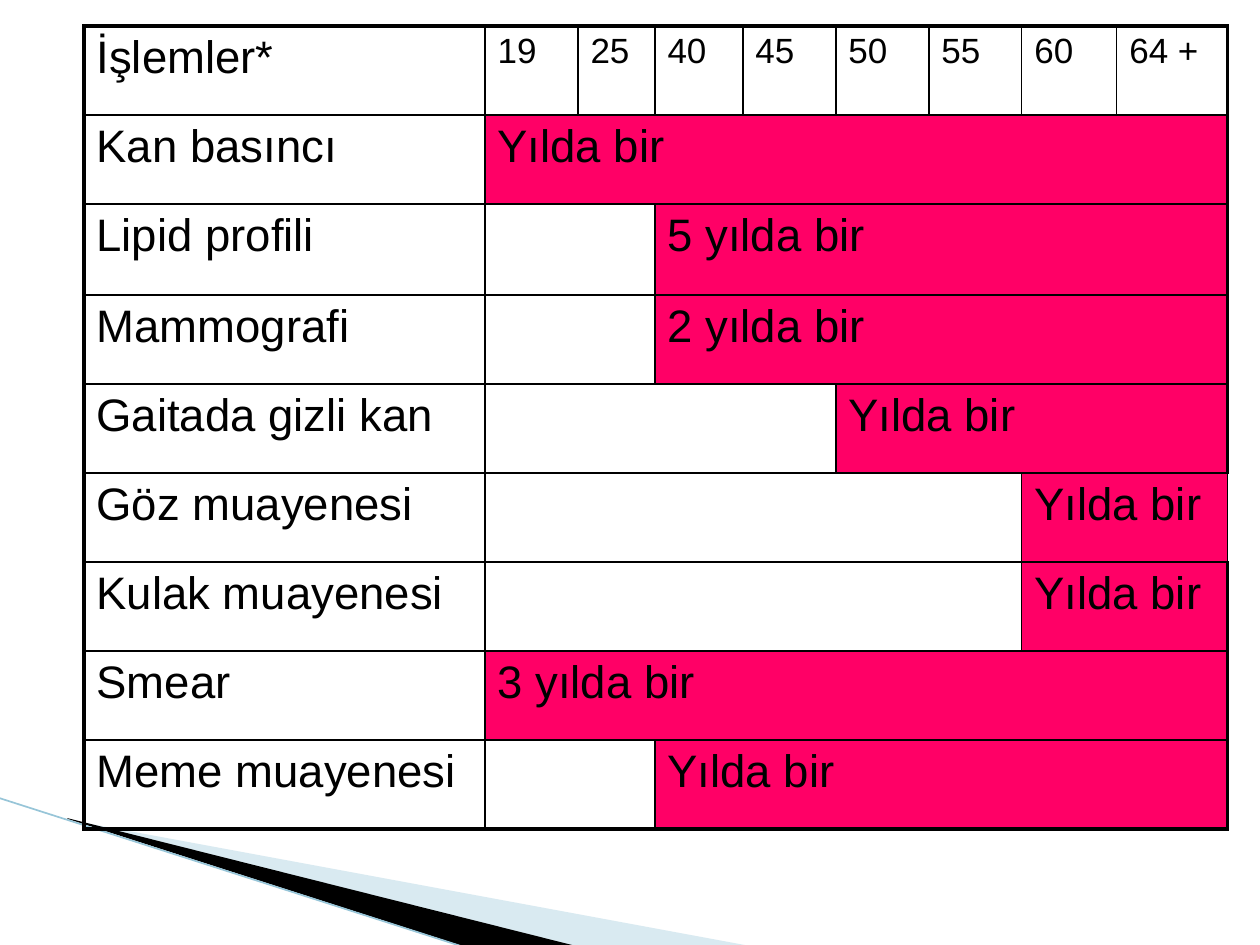
from dataclasses import dataclass
from lxml.etree import SubElement
from pptx import Presentation
from pptx.dml.color import RGBColor as Rgb
from pptx.enum.shapes import MSO_CONNECTOR as Link
from pptx.oxml.ns import qn
from pptx.util import Emu, Pt


@dataclass(frozen=True)
class Theme:
    font: str = "Arial"
    ink: str = "000000"
    pink: str = "FF0066"
    pale: str = "A0CBDC"
    edge: str = "97C5D8"
    big: int = 26
    small: int = 20
    thin: float = 1
    thick: float = 2.25


T = Theme()
COLS = [401, 93, 77, 88, 93, 93, 93, 95, 111]
ROWS = [89, 89, 91, 89, 89, 89, 89, 89, 89]
AGES = ["19", "25", "40", "45", "50", "55", "60", "64 +"]
TESTS = [
    ("Kan basıncı", 1, "Yılda bir"),
    ("Lipid profili", 3, "5 yılda bir"),
    ("Mammografi", 3, "2 yılda bir"),
    ("Gaitada gizli kan", 5, "Yılda bir"),
    ("Göz muayenesi", 7, "Yılda bir"),
    ("Kulak muayenesi", 7, "Yılda bir"),
    ("Smear", 1, "3 yılda bir"),
    ("Meme muayenesi", 3, "Yılda bir"),
]
EYE_ROW = 5


def px(n):
    return Emu(round(n * 914400 / 126))


def write(frame, text, size=T.big, color=T.ink):
    par = frame.paragraphs[0]
    run = par.add_run()
    run.text = text
    font = run.font
    font.name, font.size = T.font, Pt(size)
    font.color.rgb = Rgb.from_string(color)


def rule(cell, sides):
    props = cell._tc.get_or_add_tcPr()
    for side, width in zip("LRTB", sides):
        line = SubElement(props, qn(f"a:ln{side}"), w=str(Pt(width)))
        fill = SubElement(line, qn("a:solidFill"))
        SubElement(fill, qn("a:srgbClr"), val=T.ink)


def fill_span(table, row, start, end, text="", color=None, size=T.big):
    last = len(COLS) - 1
    sides = [
        T.thick if start == 0 else T.thin,
        T.thick if end == last and row != EYE_ROW else T.thin,
        T.thick if row == 0 else T.thin,
        T.thick if row == len(ROWS) - 1 else T.thin,
    ]
    for col in range(start, end + 1):
        cell = table.cell(row, col)
        rule(cell, sides)
        if color:
            cell.fill.solid()
            cell.fill.fore_color.rgb = Rgb.from_string(color)
        else:
            cell.fill.background()
    head = table.cell(row, start)
    if end > start:
        head.merge(table.cell(row, end))
    if text:
        write(head.text_frame, text, size=size)


def add_plan(slide, x, y):
    frame = slide.shapes.add_table(
        len(ROWS), len(COLS), px(x), px(y), px(sum(COLS)), px(sum(ROWS)))
    table = frame.table
    table.first_row = table.horz_banding = False
    for col, wide in zip(table.columns, COLS):
        col.width = px(wide)
    for row, high in zip(table.rows, ROWS):
        row.height = px(high)
    fill_span(table, 0, 0, 0, "İşlemler*")
    for col, age in enumerate(AGES, 1):
        fill_span(table, 0, col, col, age, size=T.small)
    for row, (name, start, often) in enumerate(TESTS, 1):
        fill_span(table, row, 0, 0, name)
        if start > 1:
            fill_span(table, row, 1, start - 1)
        fill_span(table, row, start, len(COLS) - 1, often, T.pink)


def add_wedge(slide, x, y, dots, color, alpha=100):
    spots = [(px(x + dx), px(y + dy)) for dx, dy in dots]
    form = slide.shapes.build_freeform(*spots[0])
    form.add_line_segments(spots[1:])
    shape = form.convert_to_shape()
    shape.shadow.inherit = False
    shape.line.fill.background()
    shape.fill.solid()
    shape.fill.fore_color.rgb = Rgb.from_string(color)
    if alpha < 100:
        tone = shape._element.spPr.find(f".//{qn('a:srgbClr')}")
        SubElement(tone, qn("a:alpha"), val=str(alpha * 1000))


def add_swoosh(slide, x, y):
    add_wedge(slide, x, y, [(70, 22), (751, 148), (576, 148), (70, 21)],
              T.pale, alpha=40)
    add_wedge(slide, x, y, [(68, 20), (577, 148), (470, 150), (69, 21)], T.ink)
    line = slide.shapes.add_connector(
        Link.STRAIGHT, px(x), px(y), px(x + 468), px(y + 150))
    line.line.width = Pt(0.95)
    line.line.color.rgb = Rgb.from_string(T.edge)
    SubElement(line._element.spPr, qn("a:effectLst"))


def main():
    deck = Presentation()
    deck.slide_width, deck.slide_height = px(1260), px(945)
    slide = deck.slides.add_slide(deck.slide_layouts[6])
    add_swoosh(slide, -1, 798)
    add_plan(slide, 84, 26)
    deck.save("out.pptx")


if __name__ == "__main__":
    main()
